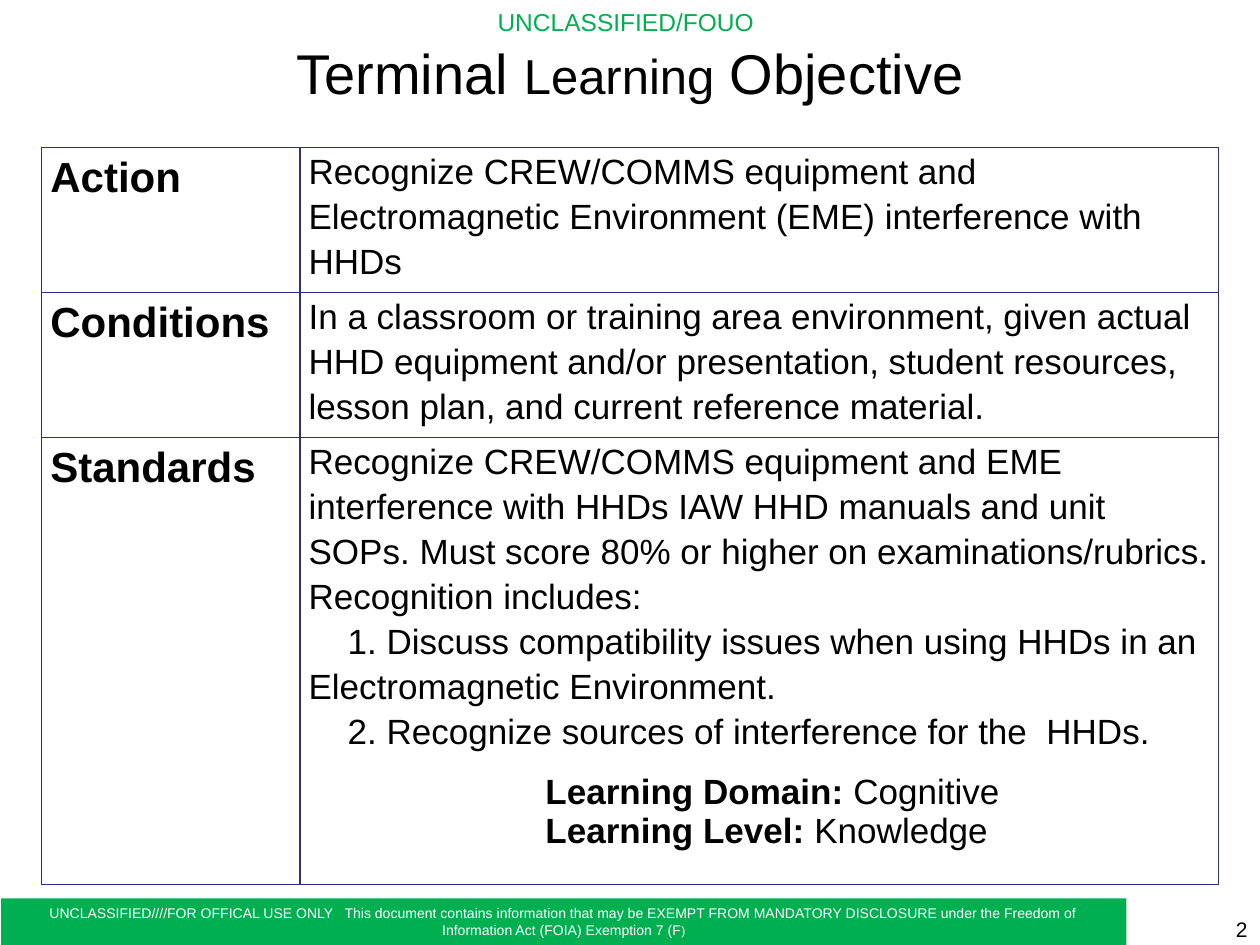
from lxml import etree
from pptx import Presentation
from pptx.dml.color import RGBColor
from pptx.enum import shapes, text
from pptx.oxml.ns import qn
from pptx.util import Inches, Pt

THEME = {
    "font": "Arial",
    "ink": RGBColor(0, 0, 0),
    "paper": RGBColor(255, 255, 255),
    "green": RGBColor(0x00, 0xB0, 0x50),
    "border": "2D2D8A",
    "title": 32, "title_small": 28, "label": 24, "body": 20,
    "marking": 14, "number": 12, "notice": 8, "notice_small": 7,
}

MARKING = "UNCLASSIFIED/FOUO"
TITLE = [("Terminal ", "title"), ("Learning", "title_small"), (" Objective", "title")]
NOTICE = [
    ("UNCLASSIFIED////FOR OFFICAL USE ONLY   This document contains information that may be "
     "EXEMPT FROM MANDATORY DISCLOSURE under the Freedom of Information Act (FOIA) "
     "Exemption 7 (F", "notice"),
    (")", "notice_small"),
]
PAGE = "2"

# Each paragraph: kind, bold lead-in, plain text
OBJECTIVE = [
    ("Action", [
        ("plain", "", "Recognize CREW/COMMS equipment and Electromagnetic Environment (EME) "
                      "interference with HHDs"),
    ]),
    ("Conditions", [
        ("plain", "", "In a classroom or training area environment, given actual HHD equipment "
                      "and/or presentation, student resources, lesson plan, and current "
                      "reference material."),
    ]),
    ("Standards", [
        ("plain", "", "Recognize CREW/COMMS equipment and EME interference with HHDs IAW HHD "
                      "manuals and unit SOPs. Must score 80% or higher on examinations/rubrics. "
                      "Recognition includes:"),
        ("item", "", "1. Discuss compatibility issues when using HHDs in an Electromagnetic "
                     "Environment."),
        ("item", "", "2. Recognize sources of interference for the  HHDs."),
        ("domain", "Learning Domain: ", "Cognitive"),
        ("level", "Learning Level: ", "Knowledge"),
    ]),
]
# Left margin and first-line indent in inches, line spacing, space before in points
PARAGRAPH_STYLES = {
    "plain": (0, 0, 1.15, 0),
    "item": (0, 0.31, 1.15, 0),
    "domain": (1.88, 0, 1.0, 12),
    "level": (1.88, 0, 1.0, 0),
}
COLUMNS = [2.05, 7.29]
ROWS = [1.15, 1.15, 3.55]


def style(font, size, color="ink", bold=None):
    font.name, font.size, font.bold = THEME["font"], Pt(THEME[size]), bold
    font.color.rgb = THEME[color]


def add_sized_runs(paragraph, parts, color):
    for words, size in parts:
        run = paragraph.add_run()
        run.text = words
        style(run.font, size, color)


def add_label(slide, box, words, size, color, align, wrap=True):
    frame = slide.shapes.add_textbox(*map(Inches, box)).text_frame
    frame.word_wrap = wrap
    frame.vertical_anchor = text.MSO_ANCHOR.MIDDLE
    line = frame.paragraphs[0]
    line.text, line.alignment = words, align
    style(line.font, size, color)


def format_cell(cell):
    cell.margin_left = cell.margin_right = Inches(0.07)
    cell.margin_top = cell.margin_bottom = 0
    cell.fill.solid()
    cell.fill.fore_color.rgb = THEME["paper"]
    properties = cell._tc.get_or_add_tcPr()
    for place, side in enumerate(("a:lnL", "a:lnR", "a:lnT", "a:lnB")):
        edge = etree.Element(qn(side), w=str(Pt(1)))
        fill = etree.SubElement(edge, qn("a:solidFill"))
        etree.SubElement(fill, qn("a:srgbClr"), val=THEME["border"])
        properties.insert(place, edge)


def fill_body(frame, paragraphs):
    for number, (kind, lead, words) in enumerate(paragraphs):
        line = frame.add_paragraph() if number else frame.paragraphs[0]
        margin, indent, spacing, before = PARAGRAPH_STYLES[kind]
        properties = line._p.get_or_add_pPr()
        properties.set("marL", str(Inches(margin)))
        properties.set("indent", str(Inches(indent)))
        line.line_spacing = spacing
        if before:
            line.space_before = Pt(before)
        if lead:
            opening = line.add_run()
            opening.text, opening.font.bold = lead, True
        line.add_run().text = words
        style(line.font, "body")


def add_objective_table(slide):
    grid = slide.shapes.add_table(
        len(ROWS), len(COLUMNS), Inches(0.33), Inches(1.17),
        Inches(sum(COLUMNS)), Inches(sum(ROWS))).table
    grid.first_row = grid.horz_banding = False
    for column, width in zip(grid.columns, COLUMNS):
        column.width = Inches(width)
    for row, height, (label, paragraphs) in zip(grid.rows, ROWS, OBJECTIVE):
        row.height = Inches(height)
        for cell in row.cells:
            format_cell(cell)
        heading = row.cells[0].text_frame.paragraphs[0]
        heading.text, heading.line_spacing = label, 1.15
        style(heading.font, "label", bold=True)
        fill_body(row.cells[1].text_frame, paragraphs)


def add_notice(slide):
    bar = slide.shapes.add_shape(
        shapes.MSO_SHAPE.RECTANGLE, *map(Inches, (0.01, 7.13, 8.93, 0.37)))
    bar.shadow.inherit = False
    bar.fill.solid()
    bar.fill.fore_color.rgb = THEME["green"]
    bar.line.fill.background()
    bar.text_frame.word_wrap = True
    bar.text_frame.vertical_anchor = text.MSO_ANCHOR.TOP
    line = bar.text_frame.paragraphs[0]
    line.alignment = text.PP_ALIGN.CENTER
    add_sized_runs(line, NOTICE, "paper")


def add_title(slide):
    title = slide.shapes.title
    title.left, title.top, title.width, title.height = map(Inches, (0, 0.25, 10, 0.64))
    frame = title.text_frame
    frame.auto_size = text.MSO_AUTO_SIZE.NONE
    frame.vertical_anchor = text.MSO_ANCHOR.MIDDLE
    frame.paragraphs[0].alignment = text.PP_ALIGN.CENTER
    add_sized_runs(frame.paragraphs[0], TITLE, "ink")


def main():
    deck = Presentation()
    deck.slide_width, deck.slide_height = Inches(10), Inches(7.5)
    slide = deck.slides.add_slide(deck.slide_layouts[5])
    add_label(slide, (3.85, 0, 2.29, 0.34), MARKING, "marking", "green",
              text.PP_ALIGN.LEFT, wrap=False)
    add_notice(slide)
    add_title(slide)
    add_objective_table(slide)
    add_label(slide, (7.67, 7.25, 2.33, 0.25), PAGE, "number", "ink", text.PP_ALIGN.RIGHT)
    deck.save("out.pptx")


if __name__ == "__main__":
    main()
